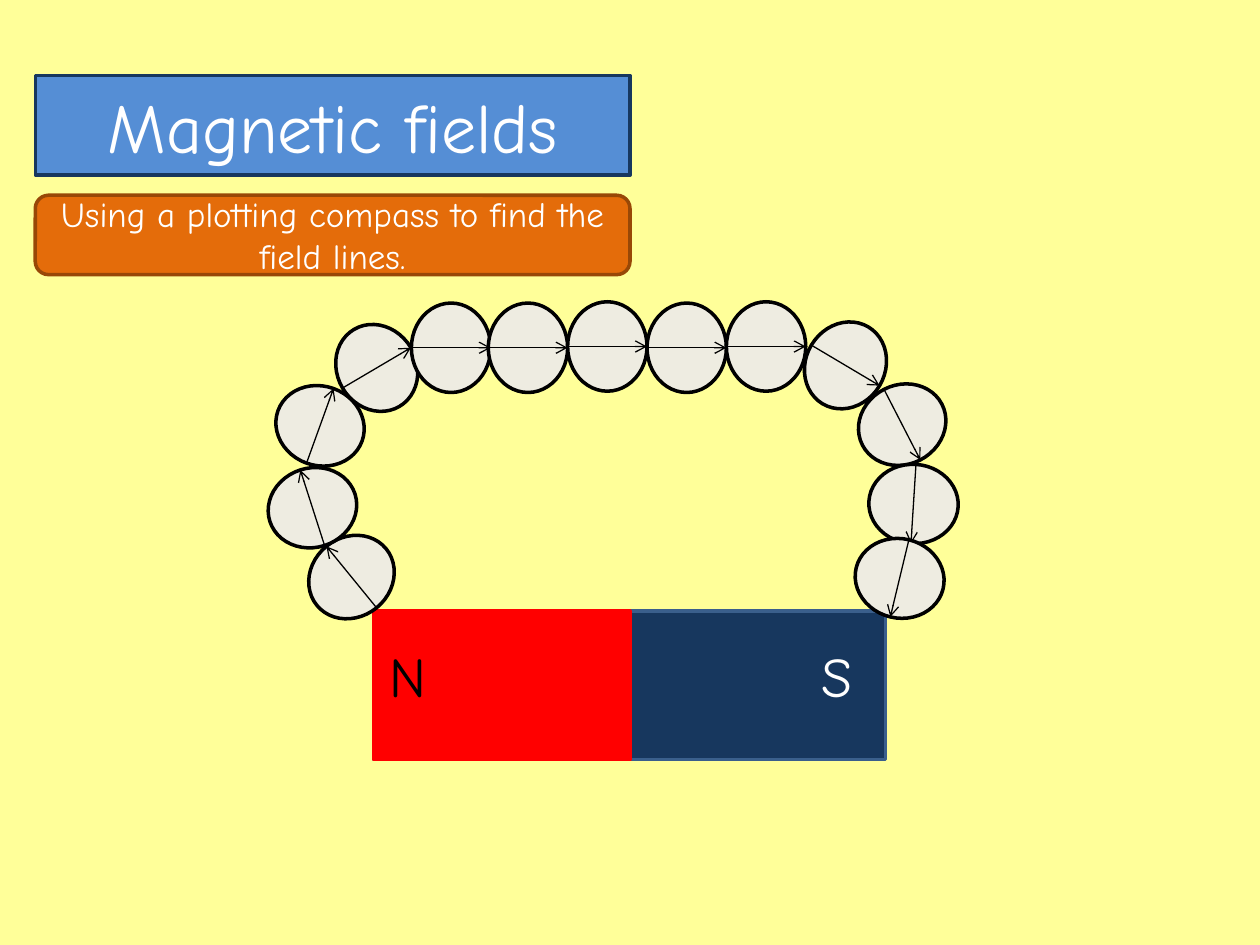
import math
from dataclasses import dataclass

import pptx
import pptx.dml.color
import pptx.enum.shapes
import pptx.enum.text
import pptx.oxml
import pptx.oxml.ns
import pptx.util

Inches = pptx.util.Inches
Pt = pptx.util.Pt
SHAPE = pptx.enum.shapes.MSO_SHAPE
ALIGN = pptx.enum.text.PP_ALIGN
ANCHOR = pptx.enum.text.MSO_ANCHOR
NS = pptx.oxml.ns.nsdecls("a")


@dataclass(frozen=True)
class Theme:
    font: str = "Comic Neue"
    background: str = "FFFF99"
    title: str = "558ED5"
    title_line: str = "17375E"
    subtitle: str = "E46C0A"
    subtitle_line: str = "984807"
    north: str = "FF0000"
    south: str = "17375E"
    south_line: str = "3A5F8C"
    compass: str = "EEECE1"
    black: str = "000000"
    white: str = "FFFFFF"
    title_size: int = 40
    subtitle_size: int = 20
    pole_size: int = 32
    outline: float = 2
    needle: float = 0.75


THEME = Theme()

# Centre x, centre y and needle heading in degrees clockwise from up
COMPASSES = [
    (2.79, 4.58, 320.8), (2.48, 4.03, 342.2), (2.54, 3.38, 19.9),
    (2.99, 2.92, 59.5), (3.58, 2.76, 90), (4.19, 2.76, 90),
    (4.82, 2.75, 90), (5.45, 2.76, 90), (6.08, 2.75, 90),
    (6.71, 2.9, 120.7), (7.16, 3.37, 152.8), (7.25, 4, 183.6),
    (7.14, 4.59, 193.5),
]


def rgb(value):
    return pptx.dml.color.RGBColor.from_string(value)


def write(sp, text, size, color, align=ALIGN.LEFT, anchor=ANCHOR.TOP):
    tf = sp.text_frame
    tf.word_wrap = True
    tf.auto_size = pptx.enum.text.MSO_AUTO_SIZE.NONE
    tf.vertical_anchor = anchor
    p = tf.paragraphs[0]
    p.alignment = align
    r = p.add_run()
    r.text = text
    r.font.name = THEME.font
    r.font.size = Pt(size)
    r.font.color.rgb = rgb(color)


def paint(sp, fill, line):
    sp.fill.solid()
    sp.fill.fore_color.rgb = rgb(fill)
    sp.line.color.rgb = rgb(line)
    sp.line.width = Pt(THEME.outline)


def add_shape(shapes, kind, x, y, w, h, fill, line):
    sp = shapes.add_shape(kind, Inches(x), Inches(y), Inches(w), Inches(h))
    sp.shadow.inherit = False
    paint(sp, fill, line)
    return sp


def add_title(s, text, x, y, w, h):
    """Turn the title placeholder into a rounded banner."""
    sp = s.shapes.title
    sp.left, sp.top, sp.width, sp.height = map(Inches, (x, y, w, h))
    sp._element.spPr.append(pptx.oxml.parse_xml(
        f'<a:prstGeom {NS} prst="roundRect"><a:avLst/></a:prstGeom>'))
    paint(sp, THEME.title, THEME.title_line)
    write(sp, text, THEME.title_size, THEME.white, ALIGN.CENTER, ANCHOR.MIDDLE)


def add_subtitle(s, text, x, y, w, h):
    sp = add_shape(s.shapes, SHAPE.ROUNDED_RECTANGLE, x, y, w, h,
                   THEME.subtitle, THEME.subtitle_line)
    write(sp, text, THEME.subtitle_size, THEME.white, ALIGN.CENTER, ANCHOR.MIDDLE)


def add_magnet(s, x, y, w, h):
    shapes = s.shapes.add_group_shape().shapes
    add_shape(shapes, SHAPE.RECTANGLE, x, y, w, h, THEME.south, THEME.south_line)
    add_shape(shapes, SHAPE.RECTANGLE, x, y, w / 2, h, THEME.north, THEME.north)
    label_w, label_h = 0.54, 0.8
    poles = [("N", x + 0.02, THEME.black),
             ("S", x + w - label_w - 0.07, THEME.white)]
    for text, left, color in poles:
        sp = shapes.add_textbox(Inches(left), Inches(y + (h - label_h) / 2),
                                Inches(label_w), Inches(label_h))
        write(sp, text, THEME.pole_size, color)


def add_compass(s, cx, cy, heading, w=0.71, h=0.63):
    """Draw a dial whose needle spans its height, both turned to the heading."""
    shapes = s.shapes.add_group_shape().shapes
    dial = add_shape(shapes, SHAPE.OVAL, cx - w / 2, cy - h / 2, w, h,
                     THEME.compass, THEME.black)
    dial.rotation = heading
    dx = math.sin(math.radians(heading)) * h / 2
    dy = -math.cos(math.radians(heading)) * h / 2
    needle = shapes.add_connector(
        pptx.enum.shapes.MSO_CONNECTOR.STRAIGHT,
        Inches(cx - dx), Inches(cy - dy), Inches(cx + dx), Inches(cy + dy))
    needle.line.color.rgb = rgb(THEME.black)
    needle.line.width = Pt(THEME.needle)
    needle.line._get_or_add_ln().append(
        pptx.oxml.parse_xml(f'<a:tailEnd {NS} type="arrow"/>'))
    needle._element.spPr.append(pptx.oxml.parse_xml(f"<a:effectLst {NS}/>"))


def main():
    prs = pptx.Presentation()
    prs.slide_width, prs.slide_height = Inches(10), Inches(7.5)
    s = prs.slides.add_slide(prs.slide_layouts.get_by_name("Title Only"))
    s.background.fill.solid()
    s.background.fill.fore_color.rgb = rgb(THEME.background)
    add_title(s, "Magnetic fields", 0.28, 0.6, 4.72, 0.79)
    add_subtitle(s, "Using a plotting compass to find the field lines.",
                 0.28, 1.55, 4.72, 0.63)
    add_magnet(s, 2.97, 4.85, 4.06, 1.18)
    for cx, cy, heading in COMPASSES:
        add_compass(s, cx, cy, heading)
    prs.save("out.pptx")


if __name__ == "__main__":
    main()
